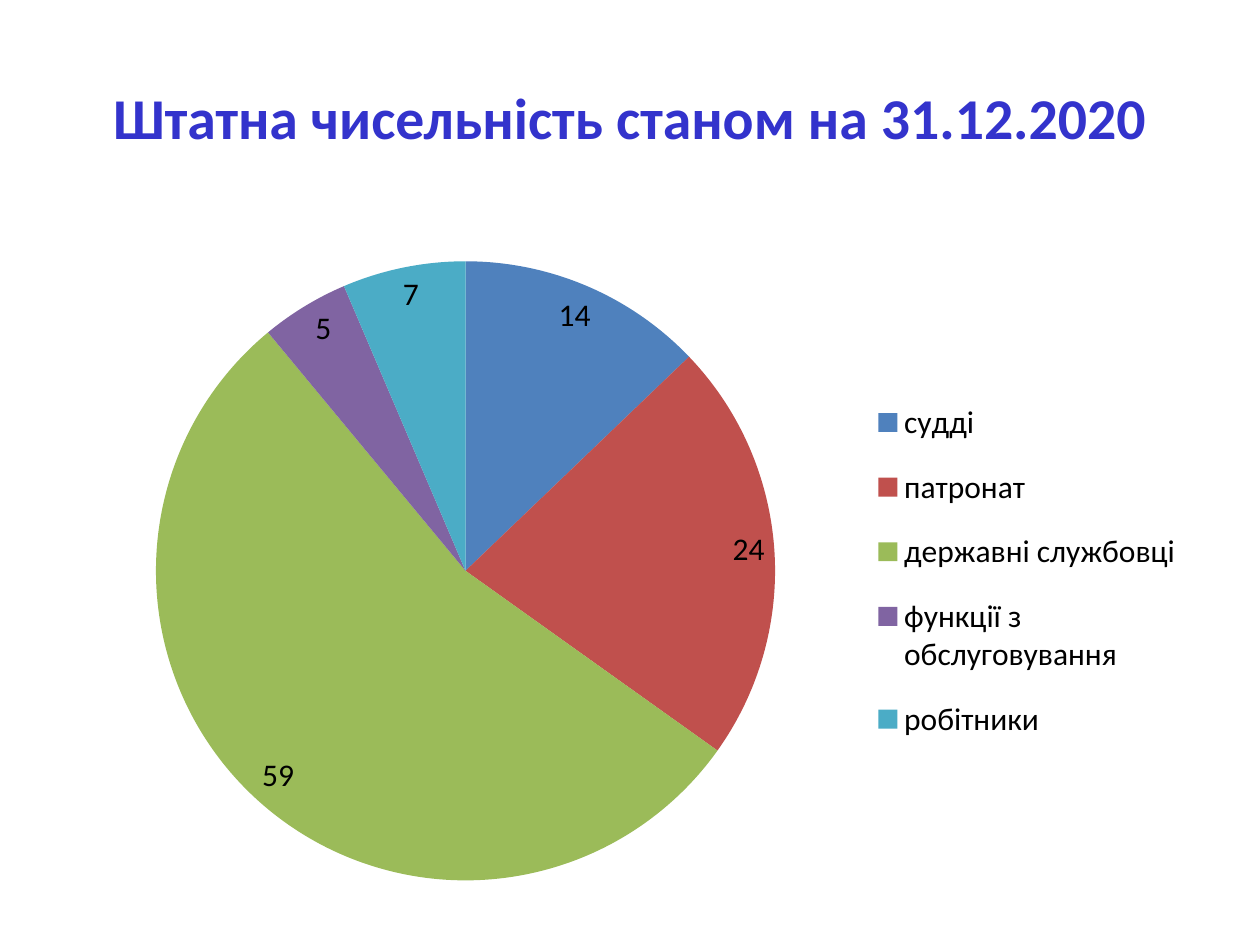
from dataclasses import dataclass

from lxml import etree
from pptx import Presentation
from pptx.chart import data as chart_data
from pptx.dml.color import RGBColor
from pptx.enum import chart as charts, text
from pptx.oxml import ns
from pptx.util import Inches, Pt

WIDTH, HEIGHT = Inches(10), Inches(7.5)
FONT = "Calibri"


@dataclass(frozen=True)
class Area:
    left: float
    top: float
    width: float
    height: float

    def on_slide(self) -> tuple[int, int, int, int]:
        return (round(self.left * WIDTH), round(self.top * HEIGHT),
                round(self.width * WIDTH), round(self.height * HEIGHT))


@dataclass(frozen=True)
class Staff:
    group: str
    posts: int
    color: str


STAFF = [
    Staff("судді", 14, "4F81BD"),
    Staff("патронат", 24, "C0504D"),
    Staff("державні службовці", 59, "9BBB59"),
    Staff("функції з обслуговування", 5, "8064A2"),
    Staff("робітники", 7, "4BACC6"),
]


def style_font(font, size: float, color: str, bold: bool = False) -> None:
    font.name = FONT
    font.size = Pt(size)
    font.bold = bold
    font.color.rgb = RGBColor.from_string(color)


def place_part(part, area: Area, position: int, target: str = "") -> None:
    for old in part.findall(ns.qn("c:layout")):
        part.remove(old)
    layout = etree.Element(ns.qn("c:layout"))
    manual = etree.SubElement(layout, ns.qn("c:manualLayout"))
    settings = {"layoutTarget": target} if target else {}
    settings |= {"xMode": "edge", "yMode": "edge", "x": area.left,
                 "y": area.top, "w": area.width, "h": area.height}
    for tag, value in settings.items():
        etree.SubElement(manual, ns.qn(f"c:{tag}")).set("val", str(value))
    part.insert(position, layout)


def add_heading(slide, area: Area, words: str) -> None:
    frame = slide.shapes.add_textbox(*area.on_slide()).text_frame
    frame.word_wrap = True
    frame.vertical_anchor = text.MSO_ANCHOR.MIDDLE
    line = frame.paragraphs[0]
    line.alignment = text.PP_ALIGN.CENTER
    run = line.add_run()
    run.text = words
    style_font(run.font, 33, "3333CC", bold=True)


def add_staff_pie(slide, area: Area, staff: list[Staff]) -> None:
    numbers = chart_data.CategoryChartData(number_format="General")
    numbers.categories = [entry.group for entry in staff]
    numbers.add_series("Series 1", [entry.posts for entry in staff])
    chart = slide.shapes.add_chart(
        charts.XL_CHART_TYPE.PIE, *area.on_slide(), numbers).chart
    style_font(chart.font, 18, "000000")
    chart.has_title = False
    chart.has_legend = True
    chart.legend.position = charts.XL_LEGEND_POSITION.RIGHT
    chart.legend.include_in_layout = False
    chart_parts = chart._chartSpace.chart
    place_part(chart_parts.plotArea, Area(0.08, 0.06, 0.55, 0.91), 0, "inner")
    place_part(chart_parts.find(ns.qn("c:legend")),
               Area(0.71, 0.23, 0.28, 0.57), 1)

    pie = chart.plots[0]
    pie.vary_by_categories = True
    pie.has_data_labels = True
    pie.data_labels.show_value = True
    pie.data_labels.show_percentage = False
    pie.data_labels.position = charts.XL_LABEL_POSITION.BEST_FIT
    for index, entry in enumerate(staff):
        fill = pie.series[0].points[index].format.fill
        fill.solid()
        fill.fore_color.rgb = RGBColor.from_string(entry.color)


def main() -> None:
    deck = Presentation()
    deck.slide_width, deck.slide_height = WIDTH, HEIGHT
    slide = deck.slides.add_slide(deck.slide_layouts[6])
    add_heading(slide, Area(0.05, 0.04, 0.9, 1 / 6),
                "Штатна чисельність станом на 31.12.2020")
    add_staff_pie(slide, Area(0.05, 7 / 30, 0.9, 0.72), STAFF)
    deck.save("out.pptx")


if __name__ == "__main__":
    main()
